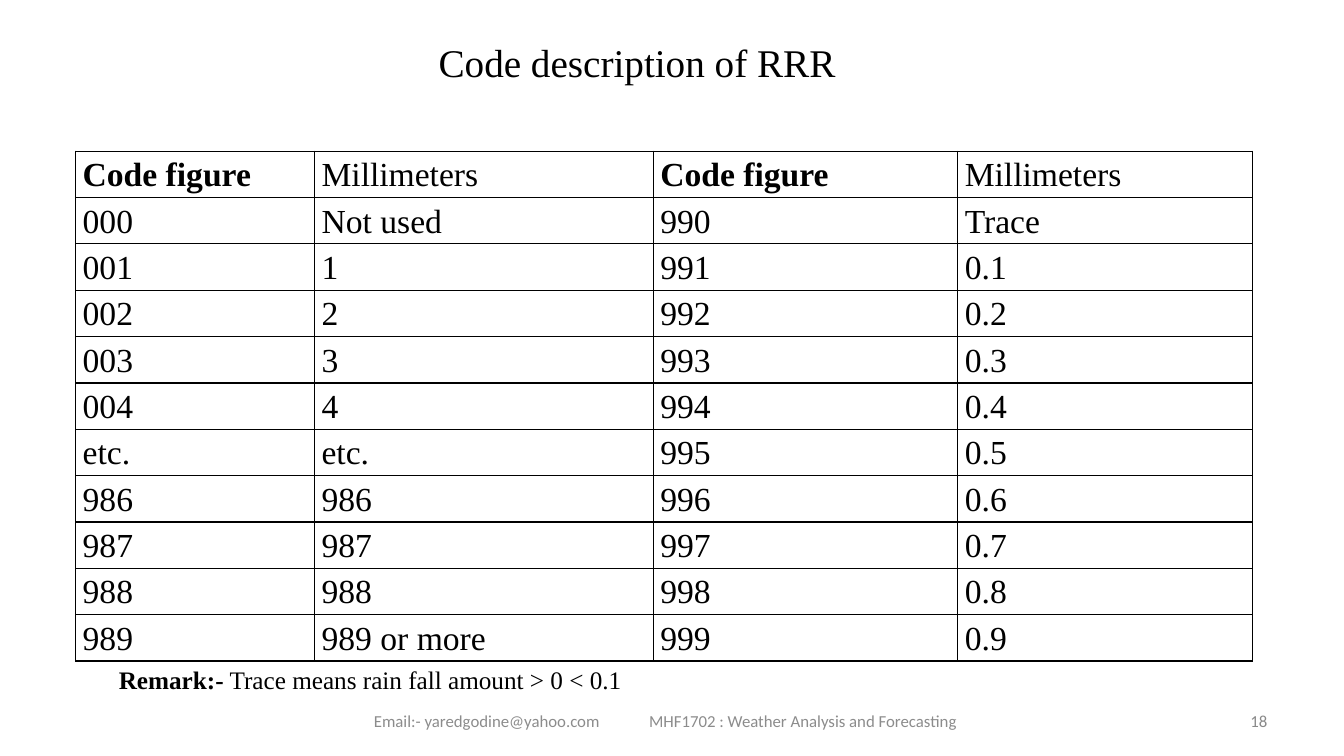
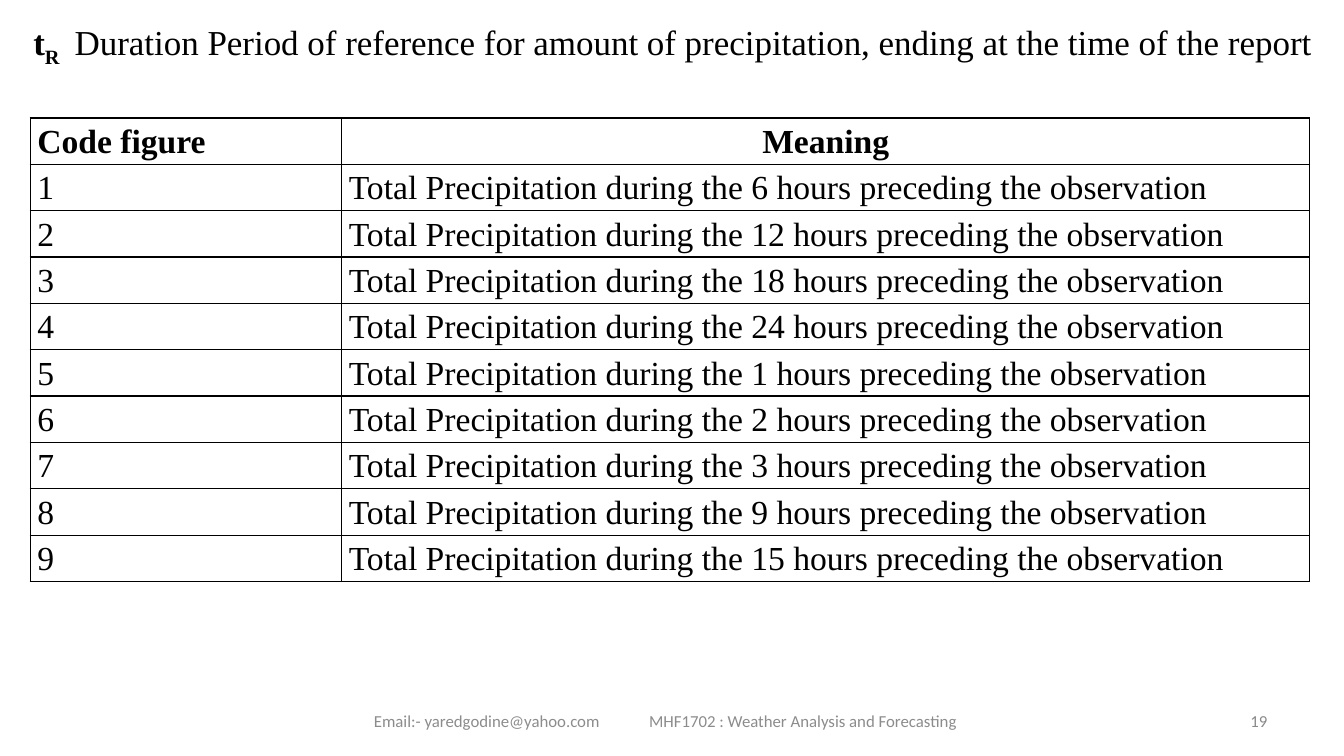
"""Build two slides of rainfall code tables with a shared footer."""
from dataclasses import dataclass

from lxml import etree
from pptx import Presentation
from pptx.dml import color
from pptx.enum import text as enums
from pptx.oxml import ns
from pptx.util import Inches, Pt

SERIF, SANS = "Times New Roman", "Calibri"
BLACK, GREY, PALE = "000000", "8C8C8C", "898989"
ALIGN, ANCHOR = enums.PP_ALIGN, enums.MSO_ANCHOR
ROW = 0.46
FOOT = "Email:- yaredgodine@yahoo.com\tMHF1702 : Weather Analysis and Forecasting"


@dataclass(frozen=True)
class Box:
    left: float
    top: float
    width: float
    height: float

    def sizes(self) -> list:
        return [Inches(v) for v in (self.left, self.top, self.width, self.height)]


@dataclass(frozen=True)
class Span:
    text: str
    bold: bool = False
    shift: int = 0


@dataclass(frozen=True)
class Style:
    size: float
    font: str = SERIF
    tint: str = BLACK
    align: ALIGN = ALIGN.LEFT
    lead: float = 1.0
    tab: float = 0
    anchor: ANCHOR = ANCHOR.TOP


@dataclass(frozen=True)
class Grid:
    left: float
    top: float
    cols: tuple
    rows: list
    align: ALIGN = ALIGN.LEFT


@dataclass(frozen=True)
class Page:
    number: int
    title: list
    box: Box
    style: Style
    grid: Grid


def paint(fill, tint: str) -> None:
    fill.solid()
    fill.fore_color.rgb = color.RGBColor.from_string(tint)


def write(frame, spans: list, style: Style) -> None:
    para = frame.paragraphs[0]
    if style.tab:
        stops = etree.SubElement(para._p.get_or_add_pPr(), ns.qn("a:tabLst"))
        etree.SubElement(stops, ns.qn("a:tab"), pos=str(Inches(style.tab)), algn="l")
    para.alignment = style.align
    para.line_spacing = style.lead
    for span in spans:
        run = para.add_run()
        run.text = span.text
        font = run.font
        font.name, font.size, font.bold = style.font, Pt(style.size), span.bold
        paint(font.fill, style.tint)
        if span.shift:
            run._r.get_or_add_rPr().set("baseline", str(span.shift * 1000))


def setup(frame, spans: list, style: Style) -> None:
    frame.word_wrap = True
    frame.auto_size = enums.MSO_AUTO_SIZE.NONE
    frame.vertical_anchor = style.anchor
    write(frame, spans, style)


def label(slide, box: Box, spans: list, style: Style) -> None:
    setup(slide.shapes.add_textbox(*box.sizes()).text_frame, spans, style)


def head(slide, page: Page) -> None:
    shape = slide.shapes.title
    shape.left, shape.top, shape.width, shape.height = page.box.sizes()
    setup(shape.text_frame, page.title, page.style)


def foot(slide, number: int) -> None:
    label(slide, Box(3.61, 6.95, 6.2, 0.4), [Span(FOOT)],
          Style(12, SANS, GREY, tab=2.73, anchor=ANCHOR.MIDDLE))
    label(slide, Box(9.56, 6.95, 3.11, 0.4), [Span(str(number))],
          Style(12, SANS, PALE, ALIGN.RIGHT, anchor=ANCHOR.MIDDLE))


def frame_cell(cell) -> None:
    props = cell._tc.get_or_add_tcPr()
    for side in ("lnL", "lnR", "lnT", "lnB"):
        line = etree.SubElement(props, ns.qn(f"a:{side}"), w=str(Pt(1)))
        solid = etree.SubElement(line, ns.qn("a:solidFill"))
        etree.SubElement(solid, ns.qn("a:srgbClr"), val=BLACK)
    cell.fill.background()
    cell.margin_left = cell.margin_right = Inches(0.07)
    cell.margin_top = cell.margin_bottom = 0


def draw(slide, grid: Grid) -> None:
    box = Box(grid.left, grid.top, sum(grid.cols), ROW * len(grid.rows))
    table = slide.shapes.add_table(len(grid.rows), len(grid.cols), *box.sizes()).table
    table.first_row = table.horz_banding = False
    for col, width in zip(table.columns, grid.cols):
        col.width = Inches(width)
    for r, row in enumerate(grid.rows):
        table.rows[r].height = Inches(ROW)
        for c, word in enumerate(row):
            cell = table.cell(r, c)
            frame_cell(cell)
            align = grid.align if r else ALIGN.LEFT
            if word == "Meaning":
                align = ALIGN.CENTER
            bold = word in ("Code figure", "Meaning")
            write(cell.text_frame, [Span(word, bold)], Style(24, align=align, lead=1.15))


def rain() -> list:
    left = [("000", "Not used")]
    left += [(f"{n:03}", str(n)) for n in range(1, 5)]
    left += [("etc.", "etc.")]
    left += [(str(n), str(n)) for n in range(986, 989)]
    left += [("989", "989 or more")]
    right = [(str(990 + n), f"0.{n}" if n else "Trace") for n in range(10)]
    return [("Code figure", "Millimeters") * 2] + [a + b for a, b in zip(left, right)]


def spell() -> list:
    hours = (6, 12, 18, 24, 1, 2, 3, 9, 15)
    return [("Code figure", "Meaning")] + [
        (str(n), f"Total Precipitation during the {h} hours preceding the observation")
        for n, h in enumerate(hours, 1)]


PAGES = [
    Page(18, [Span("Code description of RRR")], Box(4.25, 0.33, 4.4, 0.57), Style(28),
         Grid(0.75, 1.5, (2.37, 3.36, 3.02, 2.92), rain())),
    Page(19, [Span("t", True), Span("R", True, -25),
              Span("\tDuration Period of reference for amount of precipitation, "
                   "ending at the time of the report")],
         Box(0.23, 0.08, 13.08, 0.58), Style(25, lead=1.15, tab=0.41),
         Grid(0.3, 1.17, (3.09, 9.6), spell(), ALIGN.JUSTIFY)),
]


def main() -> None:
    deck = Presentation()
    deck.slide_width, deck.slide_height = Inches(13.33), Inches(7.5)
    for page in PAGES:
        slide = deck.slides.add_slide(deck.slide_layouts[5])
        foot(slide, page.number)
        head(slide, page)
        draw(slide, page.grid)
        if page.number == 18:
            label(slide, Box(1.08, 6.5, 5.4, 0.45),
                  [Span("Remark:-", True), Span(" Trace means rain fall amount > 0 < 0.1")],
                  Style(18, lead=1.15))
    deck.save("out.pptx")


if __name__ == "__main__":
    main()
